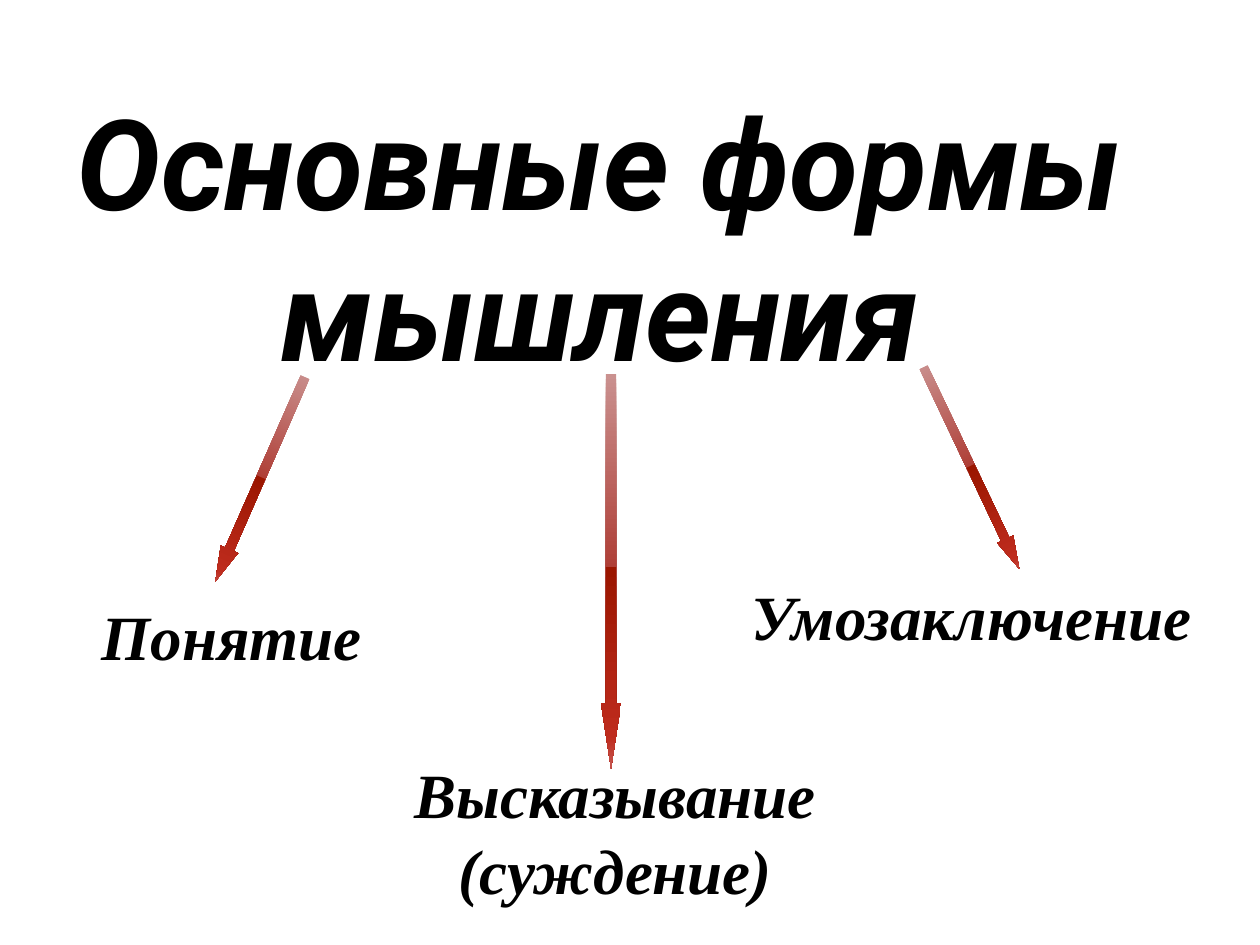
from lxml.etree import SubElement
from pptx import Presentation
from pptx.dml.color import RGBColor
from pptx.enum.shapes import MSO_SHAPE
from pptx.enum.text import MSO_ANCHOR, MSO_AUTO_SIZE, PP_ALIGN
from pptx.oxml.ns import qn
from pptx.util import Inches, Pt

BLACK = RGBColor(0x00, 0x00, 0x00)
# Arrow gradient from tail to head: position in percent, colour
ARROW_STOPS = [
    (0, RGBColor(0xCA, 0x91, 0x8F)),
    (49, RGBColor(0xAF, 0x3F, 0x37)),
    (49, RGBColor(0x9B, 0x16, 0x00)),
    (92, RGBColor(0xBE, 0x2C, 0x1E)),
    (100, RGBColor(0xC7, 0x57, 0x51)),
]


class SlideBuilder:
    title_font, title_size = "Roboto", 72
    label_font, label_size = "Times New Roman", 36

    def __init__(self, presentation):
        self.slide = presentation.slides.add_slide(presentation.slide_layouts[5])

    def set_text(self, shape, text, font_name, size, anchor, wrap=True):
        frame = shape.text_frame
        frame.word_wrap = wrap
        frame.auto_size = MSO_AUTO_SIZE.SHAPE_TO_FIT_TEXT
        frame.vertical_anchor = anchor
        paragraph = frame.paragraphs[0]
        paragraph.alignment = PP_ALIGN.CENTER
        run = paragraph.add_run()
        run.text = text
        run.font.name = font_name
        run.font.size = Pt(size)
        run.font.bold = run.font.italic = True
        run.font.color.rgb = BLACK

    def title(self, text, left, top, width, height):
        shape = self.slide.shapes.title
        shape.left, shape.top = Inches(left), Inches(top)
        shape.width, shape.height = Inches(width), Inches(height)
        self.set_text(shape, text, self.title_font, self.title_size, MSO_ANCHOR.TOP)

    def label(self, text, left, top, width, height, wrap=False):
        shape = self.slide.shapes.add_textbox(
            Inches(left), Inches(top), Inches(width), Inches(height))
        self.set_text(shape, text, self.label_font, self.label_size,
                      MSO_ANCHOR.MIDDLE, wrap)

    def arrow(self, left, top, width, height, head, rotation=0):
        shape = self.slide.shapes.add_shape(
            MSO_SHAPE.DOWN_ARROW,
            Inches(left), Inches(top), Inches(width), Inches(height))
        shape.adjustments[0] = 0.5
        shape.adjustments[1] = head
        shape.rotation = rotation
        shape.shadow.inherit = False
        shape.line.fill.background()
        shape.fill.gradient()
        shape.fill.gradient_angle = 270
        # Replace the two default stops with the arrow gradient
        stops = shape.element.spPr.find(f".//{qn('a:gsLst')}")
        for stop in list(stops):
            stops.remove(stop)
        for position, color in ARROW_STOPS:
            stop = SubElement(stops, qn("a:gs"), pos=str(position * 1000))
            SubElement(stop, qn("a:srgbClr"), val=str(color))


def main():
    presentation = Presentation()
    presentation.slide_width = Inches(10)
    presentation.slide_height = Inches(7.5)
    builder = SlideBuilder(presentation)

    builder.title("Основные формы мышления", 0.31, 0.62, 8.9, 2.52)

    # Forms of thinking
    builder.label("Понятие", 0.7, 4.69, 2.28, 0.71)
    builder.label("Умозаключение", 5.78, 4.53, 3.86, 0.7)
    builder.label("Высказывание (суждение)", 2.97, 5.94, 3.83, 1.31, wrap=True)

    # Arrows from the title to each form
    builder.arrow(1.99, 2.92, 0.15, 1.77, head=1.86, rotation=23.7)
    builder.arrow(4.77, 2.97, 0.16, 3.13, head=3.24)
    builder.arrow(7.64, 2.83, 0.14, 1.77, head=1.85, rotation=334.6)

    presentation.save("out.pptx")


if __name__ == "__main__":
    main()
